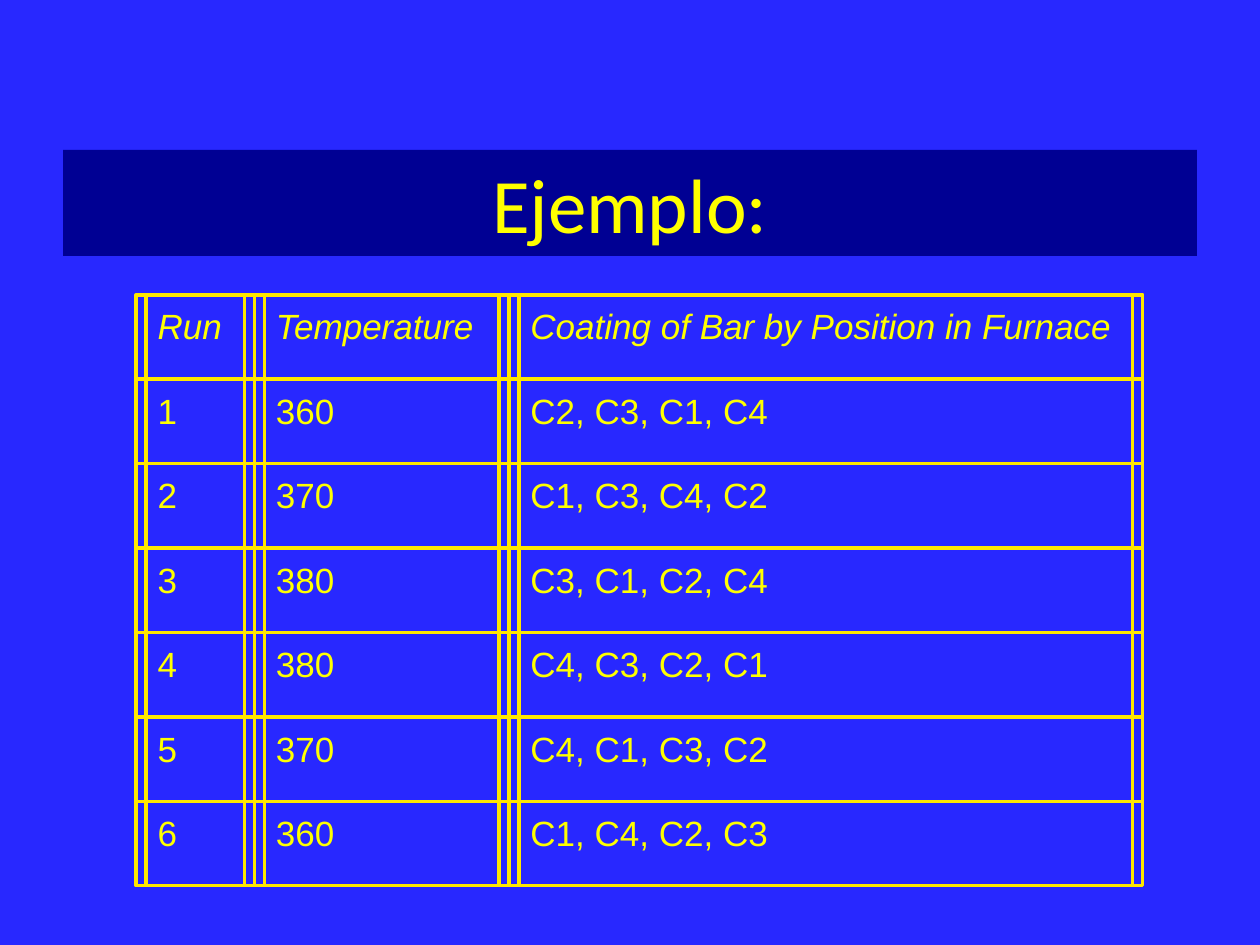
from pptx import Presentation
from pptx.dml.color import RGBColor
from pptx.enum.shapes import MSO_SHAPE
from pptx.enum.text import MSO_ANCHOR, MSO_AUTO_SIZE, PP_ALIGN
from pptx.util import Pt

SCALE = 9144
COLORS = {"back": "2828FF", "band": "000093", "line": "FFE701", "text": "FFFF00"}
TOP, ROW, GAP = 234, 67, 8
COLS = [(108, 94), (202, 202), (404, 503)]
RUNS = [
    ("Run", "Temperature", "Coating of Bar by Position in Furnace"),
    ("1", "360", "C2, C3, C1, C4"),
    ("2", "370", "C1, C3, C4, C2"),
    ("3", "380", "C3, C1, C2, C4"),
    ("4", "380", "C4, C3, C2, C1"),
    ("5", "370", "C4, C1, C3, C2"),
    ("6", "360", "C1, C4, C2, C3"),
]


def px(*nums):
    """Turn px into EMU."""
    return [num * SCALE for num in nums]


def tint(name):
    """Look up a colour by name."""
    return RGBColor.from_string(COLORS[name])


def write(frame, text, face, size, align, slant=None):
    """Set one line of text as a single run."""
    para = frame.paragraphs[0]
    para.alignment = align
    run = para.add_run()
    run.text = text
    font = run.font
    font.name, font.size, font.italic = face, Pt(size), slant
    font.color.rgb = tint("text")


def add_title(slide, text):
    """Fill the title placeholder as a dark band."""
    title = slide.shapes.title
    title.left, title.top, title.width, title.height = px(50, 119, 900, 84)
    title.fill.solid()
    title.fill.fore_color.rgb = tint("band")
    frame = title.text_frame
    frame.auto_size = MSO_AUTO_SIZE.SHAPE_TO_FIT_TEXT
    frame.vertical_anchor = MSO_ANCHOR.MIDDLE
    write(frame, text, "Calibri", 44, PP_ALIGN.CENTER)


def add_box(group, left, top, width):
    """Draw one outlined box of row height."""
    box = group.shapes.add_shape(MSO_SHAPE.RECTANGLE, *px(left, top, width, ROW))
    box.shadow.inherit = False
    box.fill.background()
    box.line.color.rgb = tint("line")
    box.line.width = Pt(2)
    return box


def add_cell(group, left, top, width, text, slant):
    """Draw a text box inside a wider frame."""
    box = add_box(group, left + GAP, top, width - 2 * GAP)
    frame = box.text_frame
    frame.word_wrap = False
    frame.vertical_anchor = MSO_ANCHOR.TOP
    frame.margin_left, frame.margin_top = px(9, 8)
    write(frame, text, "Arial", 20, PP_ALIGN.LEFT, slant)
    add_box(group, left, top, width)


def add_grid(slide):
    """Lay out the run cells row by row."""
    group = slide.shapes.add_group_shape()
    for row, texts in enumerate(RUNS):
        for (left, width), text in zip(COLS, texts):
            add_cell(group, left, TOP + row * ROW, width, text, row == 0)


def main():
    """Build and save the slide."""
    deck = Presentation()
    deck.slide_width, deck.slide_height = px(1000, 750)
    slide = deck.slides.add_slide(deck.slide_layouts[5])
    slide.background.fill.solid()
    slide.background.fill.fore_color.rgb = tint("back")
    add_grid(slide)
    add_title(slide, "Ejemplo:")
    deck.save("out.pptx")


if __name__ == "__main__":
    main()
